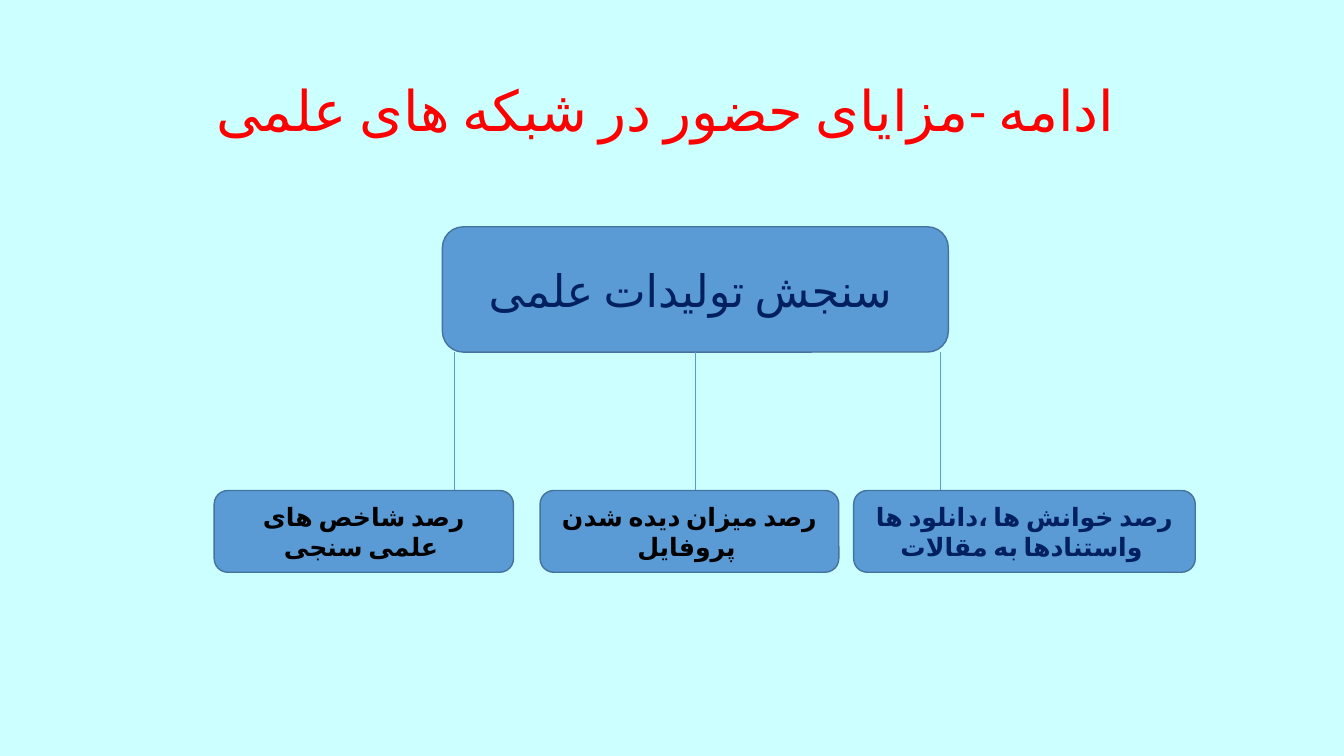
import pptx
import pptx.dml.color
import pptx.enum.lang
import pptx.enum.shapes
import pptx.enum.text
import pptx.oxml.ns
import pptx.util
from lxml import etree

Pt = pptx.util.Pt

FONT = "Calibri"
BACKGROUND, RED, NAVY, BLACK = "CCFFFF", "FF0000", "002060", "000000"
BOX_FILL, BOX_EDGE = "5B9BD5", "43739E"

TITLE = "ادامه -مزایای حضور در شبکه های علمی "
ROOT = "سنجش تولیدات علمی "
# text, left, width, text colour, x of the line from the root box
BRANCHES = [
    ("رصد خوانش ها ،دانلود ها واستنادها به مقالات ", 609.8, 244, NAVY, 672),
    ("رصد میزان دیده شدن پروفایل ", 385.8, 213.4, BLACK, 496.8),
    ("رصد شاخص های علمی سنجی ", 153, 213.8, BLACK, 324.8),
]
ROOT_LEFT, ROOT_TOP, ROOT_WIDTH, ROOT_HEIGHT = 316, 162, 361.4, 89.5
BRANCH_TOP, BRANCH_HEIGHT = 350.4, 58.4


def color(value):
    return pptx.dml.color.RGBColor.from_string(value)


def write(shape, text, size, text_color, bold=False):
    """Write one centred Persian run; its letters take the complex-script font."""
    frame = shape.text_frame
    frame.word_wrap = True
    frame.vertical_anchor = pptx.enum.text.MSO_ANCHOR.MIDDLE
    paragraph = frame.paragraphs[0]
    paragraph.alignment = pptx.enum.text.PP_ALIGN.CENTER
    run = paragraph.add_run()
    run.text = text
    run.font.name = FONT
    run.font.size = Pt(size)
    run.font.bold = bold
    run.font.color.rgb = color(text_color)
    run.font.language_id = pptx.enum.lang.MSO_LANGUAGE_ID.FARSI
    properties = run._r.get_or_add_rPr()
    etree.SubElement(properties, pptx.oxml.ns.qn("a:cs"), typeface=FONT)
    return paragraph


def add_box(slide, left, top, width, height, text, size, text_color, bold=False):
    box = slide.shapes.add_shape(
        pptx.enum.shapes.MSO_SHAPE.ROUNDED_RECTANGLE,
        Pt(left), Pt(top), Pt(width), Pt(height))
    box.shadow.inherit = False
    box.fill.solid()
    box.fill.fore_color.rgb = color(BOX_FILL)
    box.line.color.rgb = color(BOX_EDGE)
    box.line.width = Pt(1)
    write(box, text, size, text_color, bold)


def add_branch_line(slide, x):
    line = slide.shapes.add_connector(
        pptx.enum.shapes.MSO_CONNECTOR.STRAIGHT,
        Pt(x), Pt(ROOT_TOP + ROOT_HEIGHT), Pt(x), Pt(BRANCH_TOP))
    line.line.color.rgb = color(BOX_FILL)
    line.line.width = Pt(0.5)
    etree.SubElement(line._element.spPr, pptx.oxml.ns.qn("a:effectLst"))


def main():
    deck = pptx.Presentation()
    deck.slide_width, deck.slide_height = Pt(960), Pt(540)
    slide = deck.slides.add_slide(deck.slide_layouts[5])
    slide.background.fill.solid()
    slide.background.fill.fore_color.rgb = color(BACKGROUND)

    title = slide.shapes.title
    title.left, title.top, title.width, title.height = Pt(66), Pt(28.8), Pt(828), Pt(104.4)
    write(title, TITLE, 40, RED).line_spacing = 0.9

    add_box(slide, ROOT_LEFT, ROOT_TOP, ROOT_WIDTH, ROOT_HEIGHT, ROOT, 32, NAVY)
    for text, left, width, text_color, line_x in BRANCHES:
        add_branch_line(slide, line_x)
        add_box(slide, left, BRANCH_TOP, width, BRANCH_HEIGHT, text, 18, text_color, bold=True)

    deck.save("out.pptx")


if __name__ == "__main__":
    main()
